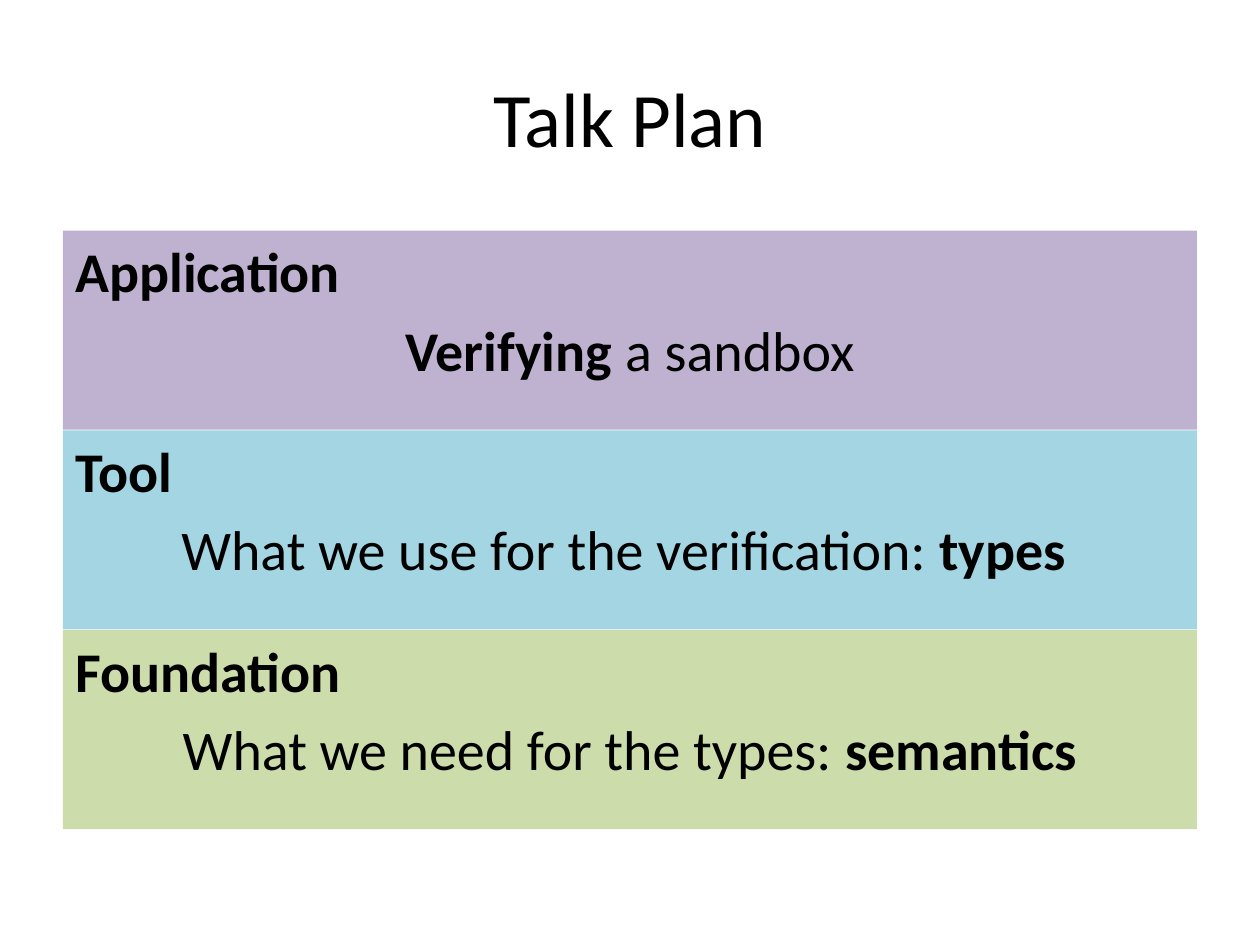
from lxml.etree import SubElement
from pptx import Presentation
from pptx.dml.color import RGBColor
from pptx.enum.shapes import MSO_SHAPE
from pptx.enum.text import MSO_ANCHOR, PP_ALIGN
from pptx.oxml.ns import qn
from pptx.util import Inches, Pt


def color(hex_string):
    return RGBColor.from_string(hex_string)


def add_run(paragraph, text, size, bold=False):
    run = paragraph.add_run()
    run.text = text
    run.font.name = "Calibri"
    run.font.size = Pt(size)
    run.font.bold = bold
    run.font.color.rgb = color("000000")


presentation = Presentation()
presentation.slide_width = Inches(10)
presentation.slide_height = Inches(7.5)
slide = presentation.slides.add_slide(presentation.slide_layouts[6])

LEFT, WIDTH = Inches(0.5), Inches(9)

title = slide.shapes.add_textbox(LEFT, Inches(0.3), WIDTH, Inches(1.25))
title.text_frame.word_wrap = True
title.text_frame.vertical_anchor = MSO_ANCHOR.MIDDLE
title_paragraph = title.text_frame.paragraphs[0]
title_paragraph.alignment = PP_ALIGN.CENTER
add_run(title_paragraph, "Talk Plan", 44)

# Each layer: fill, heading, and description as (text, bold) parts
layers = [
    ("8064A2", "Application", [("Verifying", True), (" a sandbox", False)]),
    ("4BACC6", "Tool", [("What we use for the verification: ", False), ("types ", True)]),
    ("9BBB59", "Foundation", [("What we need for the types: ", False), ("semantics", True)]),
]
LAYERS_TOP, LAYER_HEIGHT = 1.83, 1.58
LAYER_PITCH = 1.585

for index, (fill, heading, description) in enumerate(layers):
    layer = slide.shapes.add_shape(
        MSO_SHAPE.RECTANGLE, LEFT, Inches(LAYERS_TOP + index * LAYER_PITCH),
        WIDTH, Inches(LAYER_HEIGHT))
    layer.shadow.inherit = False
    layer.line.fill.background()
    layer.fill.solid()
    layer.fill.fore_color.rgb = color(fill)
    fill_color = layer.fill._xPr.find(qn("a:solidFill")).find(qn("a:srgbClr"))
    SubElement(fill_color, qn("a:alpha"), val="50000")

    text_frame = layer.text_frame
    text_frame.word_wrap = True
    text_frame.vertical_anchor = MSO_ANCHOR.TOP
    heading_paragraph = text_frame.paragraphs[0]
    heading_paragraph.alignment = PP_ALIGN.LEFT
    add_run(heading_paragraph, heading, 32, bold=True)

    description_paragraph = text_frame.add_paragraph()
    description_paragraph.alignment = PP_ALIGN.CENTER
    for text, bold in description:
        add_run(description_paragraph, text, 32, bold)

    for paragraph in text_frame.paragraphs:
        paragraph.space_before = Pt(6.4)

presentation.save("out.pptx")
